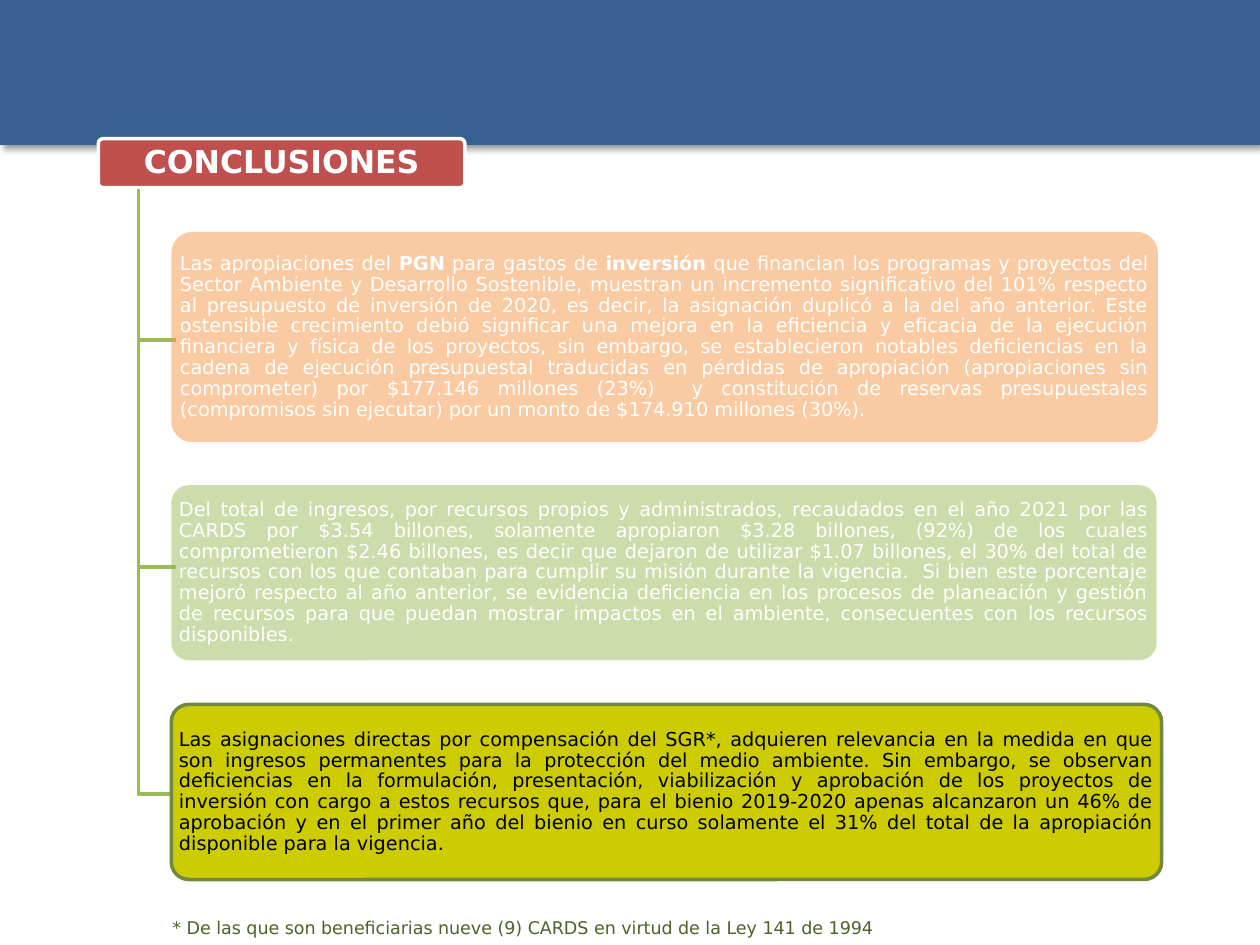
from dataclasses import dataclass

from lxml import etree
from pptx import Presentation
from pptx.dml.color import RGBColor
from pptx.enum.shapes import MSO_SHAPE
from pptx.enum.text import MSO_ANCHOR, MSO_AUTO_SIZE, PP_ALIGN
from pptx.oxml.ns import qn
from pptx.util import Inches, Pt

RECT, ROUNDED = MSO_SHAPE.RECTANGLE, MSO_SHAPE.ROUNDED_RECTANGLE
TOP, MIDDLE = MSO_ANCHOR.TOP, MSO_ANCHOR.MIDDLE
LEFT, CENTER, JUSTIFY = PP_ALIGN.LEFT, PP_ALIGN.CENTER, PP_ALIGN.JUSTIFY
TITLE_ONLY = 5
COLS, ROWS = 100, 75  # square grid cells of a tenth of an inch
CELL = Inches(0.1)


@dataclass(frozen=True)
class Theme:
    font: str = "DejaVu Sans"
    band: str = "366092"
    title_fill: str = "BF504D"
    branch: str = "9BBB59"
    orange: str = "F79646"
    olive: str = "CCCC00"
    olive_line: str = "718840"
    note: str = "4F6128"
    white: str = "FFFFFF"
    black: str = "000000"
    title_size: int = 18
    body_size: int = 11
    note_size: int = 10
    line_width: int = 2


@dataclass(frozen=True)
class Box:
    """Position and size in grid columns and rows."""
    col: float
    row: float
    cols: float
    rows: float

    def emu(self) -> list[int]:
        return [round(n * CELL) for n in (self.col, self.row, self.cols, self.rows)]


@dataclass(frozen=True)
class Card:
    box: Box
    fill: str
    color: str
    text: str  # bold parts stand between asterisk pairs
    opacity: int = 100
    line: str | None = None


T = Theme()
TRUNK_COL, TRUNK_ROW, CARD_COL = 10.7, 14.9, 13.6

CARDS = [
    Card(Box(CARD_COL, 18.4, 78.3, 16.7), T.orange, T.white,
         "Las apropiaciones del **PGN** para gastos de **inversión** que financian los "
         "programas y proyectos del Sector Ambiente y Desarrollo Sostenible, muestran un "
         "incremento significativo del 101% respecto al presupuesto de inversión de 2020, "
         "es decir, la asignación duplicó a la del año anterior. Este ostensible "
         "crecimiento debió significar una mejora en la eficiencia y eficacia de la "
         "ejecución financiera y física de los proyectos, sin embargo, se establecieron "
         "notables deficiencias en la cadena de ejecución presupuestal traducidas en "
         "pérdidas de apropiación (apropiaciones sin comprometer) por $177.146 millones "
         "(23%)  y constitución de reservas presupuestales (compromisos sin ejecutar) por "
         "un monto de $174.910 millones (30%).", opacity=50),
    Card(Box(CARD_COL, 38.5, 78.2, 13.9), T.branch, T.white,
         "Del total de ingresos, por recursos propios y administrados, recaudados en el "
         "año 2021 por las CARDS por $3.54 billones, solamente apropiaron $3.28 billones, "
         "(92%) de los cuales comprometieron $2.46 billones, es decir que dejaron de "
         "utilizar $1.07 billones, el 30% del total de recursos con los que contaban para "
         "cumplir su misión durante la vigencia.  Si bien este porcentaje mejoró respecto "
         "al año anterior, se evidencia deficiencia en los procesos de planeación y "
         "gestión de recursos para que puedan mostrar impactos en el ambiente, "
         "consecuentes con los recursos disponibles.", opacity=50),
    Card(Box(CARD_COL, 55.9, 78.6, 13.9), T.olive, T.black,
         "Las asignaciones directas por compensación del SGR*, adquieren relevancia en la "
         "medida en que son ingresos permanentes para la protección del medio ambiente. "
         "Sin embargo, se observan deficiencias en la formulación, presentación, "
         "viabilización y aprobación de los proyectos de inversión con cargo a estos "
         "recursos que, para el bienio 2019-2020 apenas alcanzaron un 46% de aprobación y "
         "en el primer año del bienio en curso solamente el 31% del total de la "
         "apropiación disponible para la vigencia.", line=T.olive_line),
]


def set_line(sp, color: str | None) -> None:
    if color is None:
        sp.line.fill.background()
    else:
        sp.line.color.rgb = RGBColor.from_string(color)
        sp.line.width = Pt(T.line_width)


def add_block(s, kind, box: Box, fill: str, line: str | None = None, opacity: int = 100):
    sp = s.shapes.add_shape(kind, *box.emu())
    sp.shadow.inherit = False
    sp.fill.solid()
    sp.fill.fore_color.rgb = RGBColor.from_string(fill)
    if opacity < 100:
        clr = sp._element.spPr.find(qn("a:solidFill"))[0]
        etree.SubElement(clr, qn("a:alpha"), val=str(opacity * 1000))
    set_line(sp, line)
    if kind == ROUNDED:
        sp.adjustments[0] = 0.1
    return sp


def add_drop_shadow(sp) -> None:
    effects = sp._element.spPr.find(qn("a:effectLst"))
    shadow = etree.SubElement(effects, qn("a:outerShdw"), blurRad=str(Pt(4)),
                              dist=str(Pt(3)), dir=str(45 * 60000), rotWithShape="0")
    clr = etree.SubElement(shadow, qn("a:srgbClr"), val=T.black)
    etree.SubElement(clr, qn("a:alpha"), val="40000")


def set_text(sp, text: str, size: int, color: str, align, anchor=MIDDLE,
             inset: tuple[float, float] = (0.02, 0.02), spacing: float = 0.9) -> None:
    tf = sp.text_frame
    tf.word_wrap = True
    tf.auto_size = MSO_AUTO_SIZE.NONE
    tf.vertical_anchor = anchor
    tf.margin_left = tf.margin_right = Inches(inset[0])
    tf.margin_top = tf.margin_bottom = Inches(inset[1])
    p = tf.paragraphs[0]
    p.alignment = align
    p.line_spacing = spacing
    p.font.name = T.font
    p.font.size = Pt(size)
    p.font.color.rgb = RGBColor.from_string(color)
    for i, part in enumerate(text.split("**")):
        r = p.add_run()
        r.text = part
        if i % 2:
            r.font.bold = True


def add_branch(s, row: float) -> None:
    builder = s.shapes.build_freeform(TRUNK_COL, TRUNK_ROW, scale=CELL)
    builder.add_line_segments([(TRUNK_COL, row), (CARD_COL, row)], close=False)
    sp = builder.convert_to_shape()
    sp.shadow.inherit = False
    sp.fill.background()
    set_line(sp, T.branch)


def add_card(s, card: Card) -> None:
    add_branch(s, card.box.row + card.box.rows / 2)
    sp = add_block(s, ROUNDED, card.box, card.fill, card.line, card.opacity)
    set_text(sp, card.text, T.body_size, card.color, JUSTIFY)


def main() -> None:
    prs = Presentation()
    prs.slide_width, prs.slide_height = COLS * CELL, ROWS * CELL
    s = prs.slides.add_slide(prs.slide_layouts[TITLE_ONLY])

    # Header band
    add_drop_shadow(add_block(s, RECT, Box(0, 0, COLS, 11.5), T.band))

    # Title on its tag, raised above the band
    add_block(s, ROUNDED, Box(7.8, 11, 29.1, 3.9), T.title_fill, T.white)
    title = s.shapes.title
    title.left, title.top, title.width, title.height = Box(7.9, 11.1, 28.9, 3.7).emu()
    set_text(title, "**CONCLUSIONES**", T.title_size, T.white, CENTER, inset=(0.04, 0.02))
    s.shapes._spTree.append(title._element)

    # Conclusions hanging from the trunk
    for card in CARDS:
        add_card(s, card)

    # Footnote
    note = s.shapes.add_textbox(*Box(12.7, 72.3, 59.3, 2.7).emu())
    set_text(note, "* De las que son beneficiarias nueve (9) CARDS en virtud de la Ley 141 de 1994",
             T.note_size, T.note, LEFT, TOP, inset=(0.1, 0.05), spacing=1.0)

    prs.save("out.pptx")


if __name__ == "__main__":
    main()
